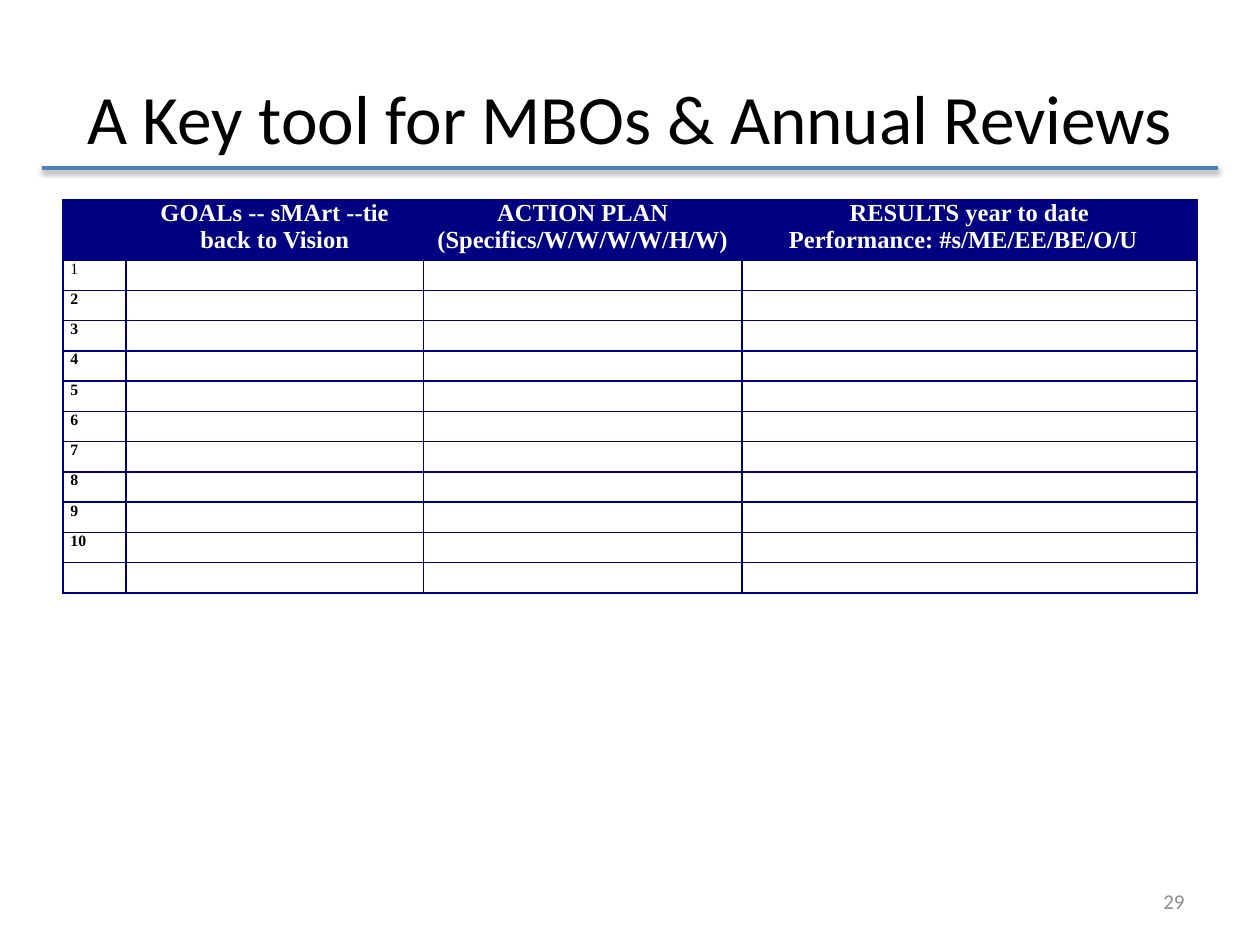
import pptx
import pptx.dml.color
import pptx.enum.shapes
import pptx.enum.text
import pptx.oxml
import pptx.oxml.ns
import pptx.util

Pt = pptx.util.Pt
ALIGN = pptx.enum.text.PP_ALIGN
MIDDLE = pptx.enum.text.MSO_ANCHOR.MIDDLE
COLORS = {"navy": "000080", "rule": "4F81BD", "black": "000000",
          "white": "FFFFFF", "gray": "8C8C8C"}
NS = pptx.oxml.ns.nsdecls("a")


def style(p, size, font, color, bold=False, align=ALIGN.LEFT):
    p.alignment = align
    p.font.size, p.font.name, p.font.bold = Pt(size), font, bold
    p.font.color.rgb = pptx.dml.color.RGBColor.from_string(COLORS[color])


def add_borders(cell):
    tcPr = cell._tc.get_or_add_tcPr()
    for i, side in enumerate(("lnL", "lnR", "lnT", "lnB")):
        tcPr.insert(i, pptx.oxml.parse_xml(
            f'<a:{side} {NS} w="{Pt(1)}"><a:solidFill><a:srgbClr val="{COLORS["navy"]}"/>'
            f'</a:solidFill></a:{side}>'))


prs = pptx.Presentation()
prs.slide_width, prs.slide_height = Pt(720), Pt(540)
s = prs.slides.add_slide(prs.slide_layouts[5])

# Rule under the title
rule = s.shapes.add_connector(pptx.enum.shapes.MSO_CONNECTOR.STRAIGHT,
                              Pt(24), Pt(96), Pt(696), Pt(96))
rule.line.width = Pt(2)
rule.line.color.rgb = pptx.dml.color.RGBColor.from_string(COLORS["rule"])
rule._element.spPr.append(pptx.oxml.parse_xml(
    f'<a:effectLst {NS}><a:outerShdw blurRad="{Pt(3.1)}" dist="{Pt(1.6)}" dir="5400000" '
    f'rotWithShape="0"><a:srgbClr val="{COLORS["black"]}"><a:alpha val="38000"/></a:srgbClr>'
    '</a:outerShdw></a:effectLst>'))

# Title
title = s.shapes.title
title.left, title.top, title.width, title.height = Pt(36), Pt(21.6), Pt(648), Pt(90)
tf = title.text_frame
tf.text = "A Key tool for MBOs & Annual Reviews"
tf.vertical_anchor = MIDDLE
tf.auto_size = pptx.enum.text.MSO_AUTO_SIZE.NONE
style(tf.paragraphs[0], 39.6, "Calibri", "black", align=ALIGN.CENTER)

# Slide number
number = s.shapes.add_textbox(Pt(516), Pt(500.5), Pt(168), Pt(28.75))
tf = number.text_frame
tf.text = "29"
tf.word_wrap = True
tf.vertical_anchor = MIDDLE
style(tf.paragraphs[0], 12, "Calibri", "gray", align=ALIGN.RIGHT)

# Goals table: a header, ten numbered rows and a blank one
headers = ["", "GOALs -- sMArt --tie back to Vision",
           "ACTION PLAN (Specifics/W/W/W/W/H/W)",
           "RESULTS year to date\nPerformance: #s/ME/EE/BE/O/U  "]
rows = [headers] + [[str(n), "", "", ""] for n in range(1, 11)] + [[""] * 4]
row_height = 17.3
frame = s.shapes.add_table(len(rows), len(headers), Pt(36), Pt(114),
                           Pt(648), Pt(row_height * (len(rows) + 1)))
table = frame.table
table.horz_banding = False
for column, width in zip(table.columns, (36, 170, 182, 260)):
    column.width = Pt(width)

for r, texts in enumerate(rows):
    table.rows[r].height = Pt(row_height * (2 if r == 0 else 1))
    for c, text in enumerate(texts):
        cell = table.cell(r, c)
        cell.margin_left = cell.margin_right = Pt(4.3)
        cell.margin_top = cell.margin_bottom = 0
        if r == 0:
            cell.fill.solid()
            cell.fill.fore_color.rgb = pptx.dml.color.RGBColor.from_string(COLORS["navy"])
        else:
            cell.fill.background()
        add_borders(cell)
        cell.text_frame.text = text
        for p in cell.text_frame.paragraphs:
            if r == 0:
                style(p, 14, "Times New Roman", "white", True, ALIGN.CENTER)
            else:
                style(p, 9, "Times New Roman", "black", r > 1)
            if not text:
                p._p.append(pptx.oxml.parse_xml(f'<a:endParaRPr {NS} sz="900"/>'))

prs.save("out.pptx")
